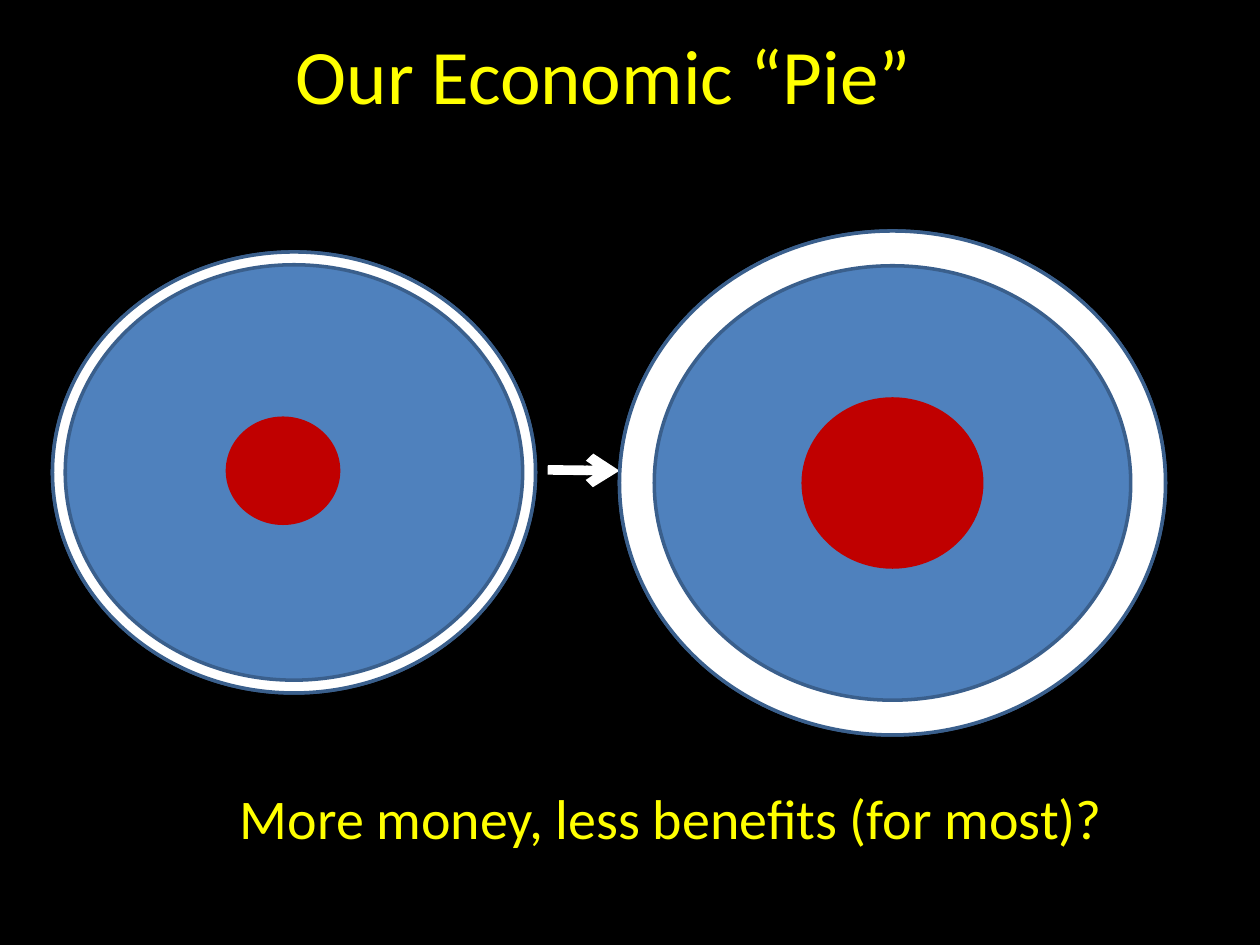
import dataclasses

import lxml.etree
import pptx
import pptx.dml.color
import pptx.enum.shapes
import pptx.oxml.ns
import pptx.util

SHAPES = pptx.enum.shapes.MSO_SHAPE
Pt = pptx.util.Pt


@dataclasses.dataclass(frozen=True)
class Theme:
    font: str = "Calibri"
    title_size: int = 44
    caption_size: int = 32
    outline_width: float = 2
    arrow_width: float = 5.5
    background: str = "000000"
    text: str = "FFFF00"
    pie: str = "4F81BD"
    outline: str = "3A5F8C"
    core: str = "C00000"
    white: str = "FFFFFF"


def color(value):
    return pptx.dml.color.RGBColor.from_string(value)


class SlideBuilder:
    def __init__(self, slide, theme):
        self.slide = slide
        self.theme = theme
        fill = slide.background.fill
        fill.solid()
        fill.fore_color.rgb = color(theme.background)

    def text(self, bounds, wording, size):
        box = self.slide.shapes.add_textbox(*map(Pt, bounds))
        box.text_frame.word_wrap = True
        paragraph = box.text_frame.paragraphs[0]
        paragraph.text = wording
        paragraph.font.name = self.theme.font
        paragraph.font.size = Pt(size)
        paragraph.font.color.rgb = color(self.theme.text)

    def round_shape(self, kind, bounds, fill, outline):
        shape = self.slide.shapes.add_shape(kind, *map(Pt, bounds))
        shape.shadow.inherit = False
        shape.fill.solid()
        shape.fill.fore_color.rgb = color(fill)
        shape.line.color.rgb = color(outline)
        shape.line.width = Pt(self.theme.outline_width)
        return shape

    def pie(self, bounds, core_bounds):
        theme = self.theme
        self.round_shape(SHAPES.OVAL, bounds, theme.pie, theme.outline)
        self.round_shape(SHAPES.OVAL, core_bounds, theme.core, theme.core)

    def rim(self, bounds, thickness):
        ring = self.round_shape(SHAPES.DONUT, bounds, self.theme.white, self.theme.outline)
        ring.adjustments[0] = thickness

    def arrow(self, start, end):
        connector = self.slide.shapes.add_connector(
            pptx.enum.shapes.MSO_CONNECTOR.STRAIGHT, *map(Pt, start + end))
        connector.line.color.rgb = color(self.theme.white)
        connector.line.width = Pt(self.theme.arrow_width)
        qn = pptx.oxml.ns.qn
        properties = connector._element.spPr
        line = properties.find(qn("a:ln"))
        lxml.etree.SubElement(line, qn("a:tailEnd"), type="arrow")
        lxml.etree.SubElement(properties, qn("a:effectLst"))


def main():
    theme = Theme()
    deck = pptx.Presentation()
    deck.slide_width, deck.slide_height = Pt(720), Pt(540)
    page = SlideBuilder(deck.slides.add_slide(deck.slide_layouts[6]), theme)

    small_pie = (30, 144, 276, 252)
    large_pie = (354, 132, 312, 288)

    page.text((162, 12, 480, 60.5), "Our Economic “Pie”", theme.title_size)
    page.pie(small_pie, (130, 239, 63.5, 60))
    page.pie(large_pie, (459, 228, 102, 96))
    page.arrow((313, 268.5), (354, 269))
    page.text((130, 444, 516, 46), "More money, less benefits (for most)?", theme.caption_size)
    page.rim(small_pie, 0.029)
    page.rim(large_pie, 0.069)

    deck.save("out.pptx")


if __name__ == "__main__":
    main()
